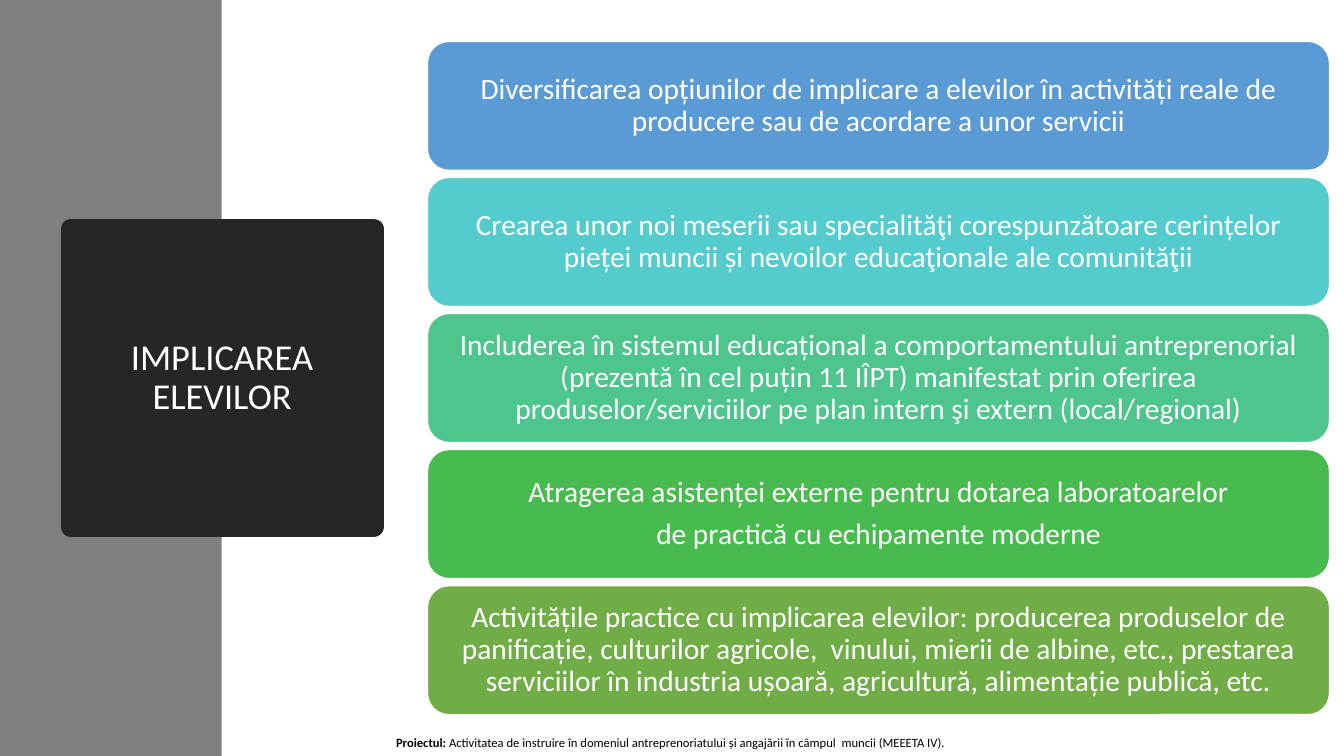
from pptx import Presentation
from pptx.dml.color import RGBColor
from pptx.enum.shapes import MSO_SHAPE
from pptx.enum.text import MSO_ANCHOR, PP_ALIGN
from pptx.oxml.ns import qn
from pptx.util import Pt
from lxml import etree

RECT, ROUND_RECT = MSO_SHAPE.RECTANGLE, MSO_SHAPE.ROUNDED_RECTANGLE
MIDDLE, CENTER = MSO_ANCHOR.MIDDLE, PP_ALIGN.CENTER

TITLE = "IMPLICAREA ELEVILOR"
# (fill, paragraphs)
CARDS = [
    ("5B9BD5", ["Diversificarea opțiunilor de implicare a elevilor în activități reale de "
                "producere sau de acordare a unor servicii"]),
    ("54CCCD", ["Crearea unor noi meserii sau specialităţi corespunzătoare cerințelor "
                "pieței muncii și nevoilor educaţionale ale comunităţii"]),
    ("4DC58D", ["Includerea în sistemul educațional a comportamentului antreprenorial "
                "(prezentă în cel puțin 11 IÎPT) manifestat prin oferirea "
                "produselor/serviciilor pe plan intern şi extern (local/regional)"]),
    ("48BB4F", ["Atragerea asistenței externe pentru dotarea laboratoarelor",
                "de practică cu echipamente moderne"]),
    ("70AD47", ["Activitățile practice cu implicarea elevilor: producerea produselor de "
                "panificație, culturilor agricole,  vinului, mierii de albine, etc., "
                "prestarea serviciilor în industria ușoară, agricultură, alimentație "
                "publică, etc."]),
]
FOOTER = [("Proiectul: ", True),
          ("Activitatea de instruire în domeniul antreprenoriatului și angajării "
           "în câmpul  muncii (MEEETA IV).", False)]

THEME = {
    "font": "Calibri", "white": "FFFFFF", "black": "000000",
    "band": "7F7F7F", "panel": "262626",
    "title": 26, "card": 21, "footer": 9,
}
SLIDE_W, SLIDE_H = 960, 540
CARD_X, CARD_Y, CARD_W, CARD_H, CARD_PITCH = 305.3, 29.5, 644.4, 92.2, 97.2
CARD_INSET = 6.5


def rgb(name):
    return RGBColor.from_string(THEME.get(name, name))


def add_box(slide, kind, box, fill, line=None, line_width=0):
    sp = slide.shapes.add_shape(kind, *map(Pt, box))
    sp.shadow.inherit = False
    sp.fill.solid()
    sp.fill.fore_color.rgb = rgb(fill)
    if line:
        sp.line.color.rgb = rgb(line)
        sp.line.width = Pt(line_width)
    else:
        sp.line.fill.background()
    return sp


def write(sp, paragraphs, size, color, space_after=0, inset=None):
    """Fill a shape with centred paragraphs, each a list of (text, bold) runs."""
    tf = sp.text_frame
    tf.word_wrap = True
    tf.vertical_anchor = MIDDLE
    if inset is not None:
        for side in ("left", "top", "right", "bottom"):
            setattr(tf, f"margin_{side}", Pt(inset))
    for i, runs in enumerate(paragraphs):
        p = tf.add_paragraph() if i else tf.paragraphs[0]
        layout = {"alignment": CENTER, "line_spacing": 0.9, "space_after": Pt(space_after)}
        for name, value in layout.items():
            setattr(p, name, value)
        for text, bold in runs:
            r = p.add_run()
            r.text = text
            for name, value in {"name": THEME["font"], "size": Pt(THEME[size]),
                                "bold": bold}.items():
                setattr(r.font, name, value)
            r.font.color.rgb = rgb(color)


def main():
    prs = Presentation()
    prs.slide_width, prs.slide_height = Pt(SLIDE_W), Pt(SLIDE_H)
    slide = prs.slides.add_slide(prs.slide_layouts[6])

    add_box(slide, RECT, (0, 0, 158.4, SLIDE_H), "band")
    panel = add_box(slide, RECT, (50.4, 163.4, 216.7, 213.1), "panel", "panel", 13.75)
    etree.SubElement(panel.line._get_or_add_ln(), qn("a:round"))
    write(panel, [[(TITLE, False)]], "title", "white")

    for i, (fill, paragraphs) in enumerate(CARDS):
        box = (CARD_X, CARD_Y + i * CARD_PITCH, CARD_W, CARD_H)
        card = add_box(slide, ROUND_RECT, box, fill, "white", 1)
        write(card, [[(text, False)] for text in paragraphs], "card", "white",
              0.35 * THEME["card"], CARD_INSET)

    footer = slide.shapes.add_textbox(*map(Pt, (270.6, 519, 416.2, 23.8)))
    write(footer, [FOOTER], "footer", "black", 6)
    prs.save("out.pptx")


if __name__ == "__main__":
    main()
